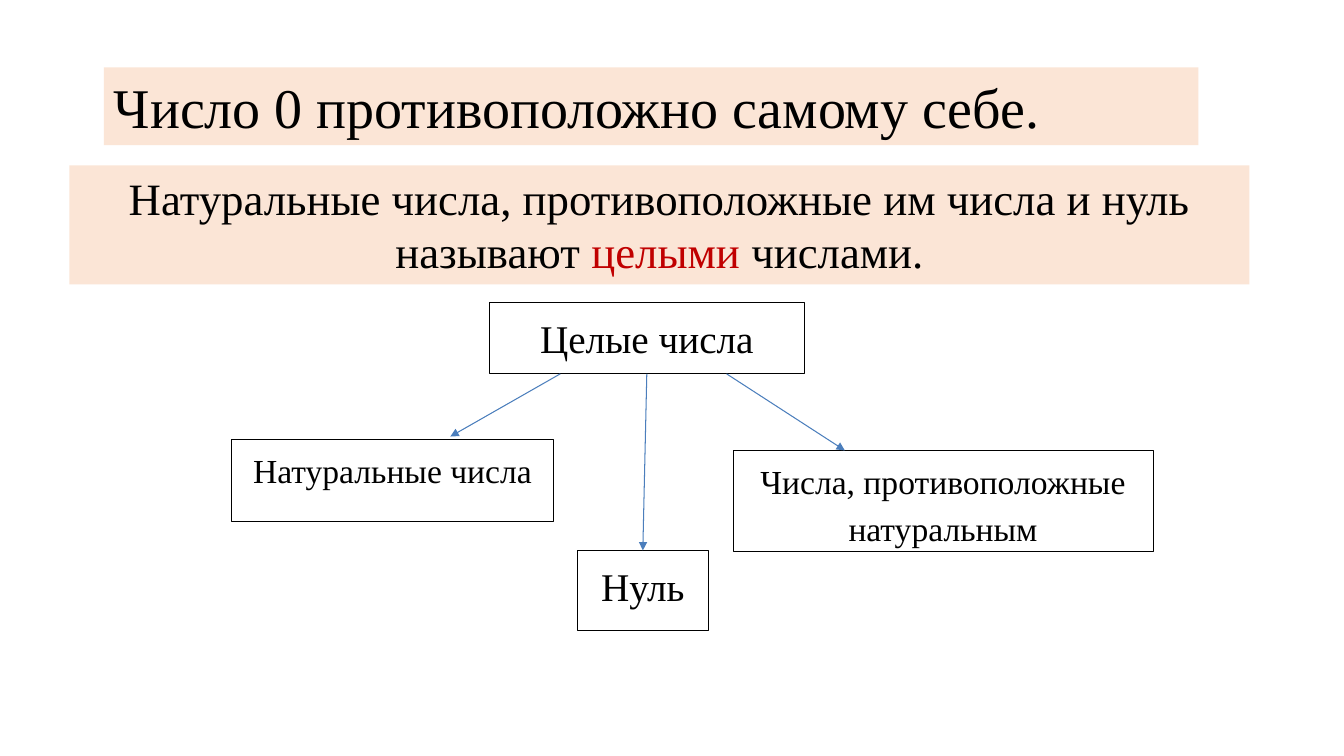
from dataclasses import dataclass
from typing import Optional

from lxml import etree
from pptx import Presentation
from pptx.dml.color import RGBColor
from pptx.enum.shapes import MSO_CONNECTOR, MSO_SHAPE
from pptx.enum.text import MSO_ANCHOR, MSO_AUTO_SIZE, PP_ALIGN
from pptx.oxml.ns import qn
from pptx.shapes.autoshape import Shape
from pptx.slide import Slide
from pptx.util import Cm, Pt

RECT = MSO_SHAPE.RECTANGLE
STRAIGHT = MSO_CONNECTOR.STRAIGHT
TOP = MSO_ANCHOR.TOP
GROW = MSO_AUTO_SIZE.SHAPE_TO_FIT_TEXT
FIXED = MSO_AUTO_SIZE.NONE
LEFT, CENTER = PP_ALIGN.LEFT, PP_ALIGN.CENTER
TOP_SIDE, BOTTOM_SIDE = 0, 2


@dataclass(frozen=True)
class Theme:
    font: str = "Times New Roman"
    ink: str = "000000"
    accent: str = "C00000"
    paper: str = "FFFFFF"
    peach: str = "FBE5D6"
    arrow: str = "4B7EBC"
    title: int = 40
    statement: int = 32
    node: int = 28
    small_node: int = 24
    border: float = 0.5
    arrow_width: float = 0.75


THEME = Theme()


@dataclass(frozen=True)
class Run:
    text: str
    color: str = THEME.ink


@dataclass(frozen=True)
class Box:
    left: float
    top: float
    width: float
    height: float
    size: int
    runs: tuple[Run, ...]
    align: PP_ALIGN = CENTER
    banner: bool = False


@dataclass(frozen=True)
class Arrow:
    x1: float
    y1: float
    x2: float
    y2: float
    source: Optional[str] = None
    target: Optional[str] = None


BOXES = {
    "title": Box(2.62, 1.7, 27.58, 1.96, THEME.title,
                 (Run("Число 0 противоположно самому себе."),), LEFT, True),
    "statement": Box(1.75, 4.17, 29.74, 3, THEME.statement,
                     (Run("Натуральные числа, противоположные им числа и нуль называют "),
                      Run("целыми", THEME.accent),
                      Run(" числами.")), banner=True),
    "integers": Box(12.34, 7.62, 7.92, 1.8, THEME.node, (Run("Целые числа"),)),
    "naturals": Box(5.84, 11.07, 8.1, 2.08, THEME.small_node, (Run("Натуральные числа"),)),
    "opposites": Box(18.47, 11.35, 10.59, 2.54, THEME.small_node,
                     (Run("Числа, противоположные натуральным"),)),
    "zero": Box(14.55, 13.87, 3.3, 2.01, THEME.node, (Run("Нуль"),)),
}

ARROWS = (
    Arrow(14.12, 9.42, 11.35, 11),
    Arrow(18.31, 9.42, 21.29, 11.35),
    Arrow(16.3, 9.42, 16.2, 13.87, "integers", "zero"),
)


def rgb(color: str) -> RGBColor:
    return RGBColor.from_string(color)


def draw_box(s: Slide, box: Box) -> Shape:
    sp = s.shapes.add_shape(RECT, Cm(box.left), Cm(box.top), Cm(box.width), Cm(box.height))
    sp.shadow.inherit = False
    sp.fill.solid()
    sp.fill.fore_color.rgb = rgb(THEME.peach if box.banner else THEME.paper)
    tf = sp.text_frame
    tf.word_wrap = True
    tf.vertical_anchor = TOP
    tf.auto_size = GROW if box.banner else FIXED
    p = tf.paragraphs[0]
    p.alignment = box.align
    if box.banner:
        sp.line.fill.background()
    else:
        sp.line.color.rgb = rgb(THEME.ink)
        sp.line.width = Pt(THEME.border)
        p.line_spacing = 1.15
        p.space_after = Pt(10)
    for run in box.runs:
        r = p.add_run()
        r.text = run.text
        r.font.name = THEME.font
        r.font.size = Pt(box.size)
        r.font.color.rgb = rgb(run.color)
    return sp


def draw_arrow(s: Slide, arrow: Arrow, shapes: dict[str, Shape]) -> None:
    cx = s.shapes.add_connector(STRAIGHT, Cm(arrow.x1), Cm(arrow.y1), Cm(arrow.x2), Cm(arrow.y2))
    if arrow.source:
        cx.begin_connect(shapes[arrow.source], BOTTOM_SIDE)
    if arrow.target:
        cx.end_connect(shapes[arrow.target], TOP_SIDE)
    cx.line.color.rgb = rgb(THEME.arrow)
    cx.line.width = Pt(THEME.arrow_width)
    etree.SubElement(cx.line._get_or_add_ln(), qn("a:tailEnd"), type="triangle")
    etree.SubElement(cx._element.spPr, qn("a:effectLst"))


def main() -> None:
    prs = Presentation()
    prs.slide_width, prs.slide_height = Cm(33.87), Cm(19.05)
    s = prs.slides.add_slide(prs.slide_layouts[6])
    shapes = {name: draw_box(s, box) for name, box in BOXES.items()}
    for arrow in ARROWS:
        draw_arrow(s, arrow, shapes)
    prs.save("out.pptx")


if __name__ == "__main__":
    main()
